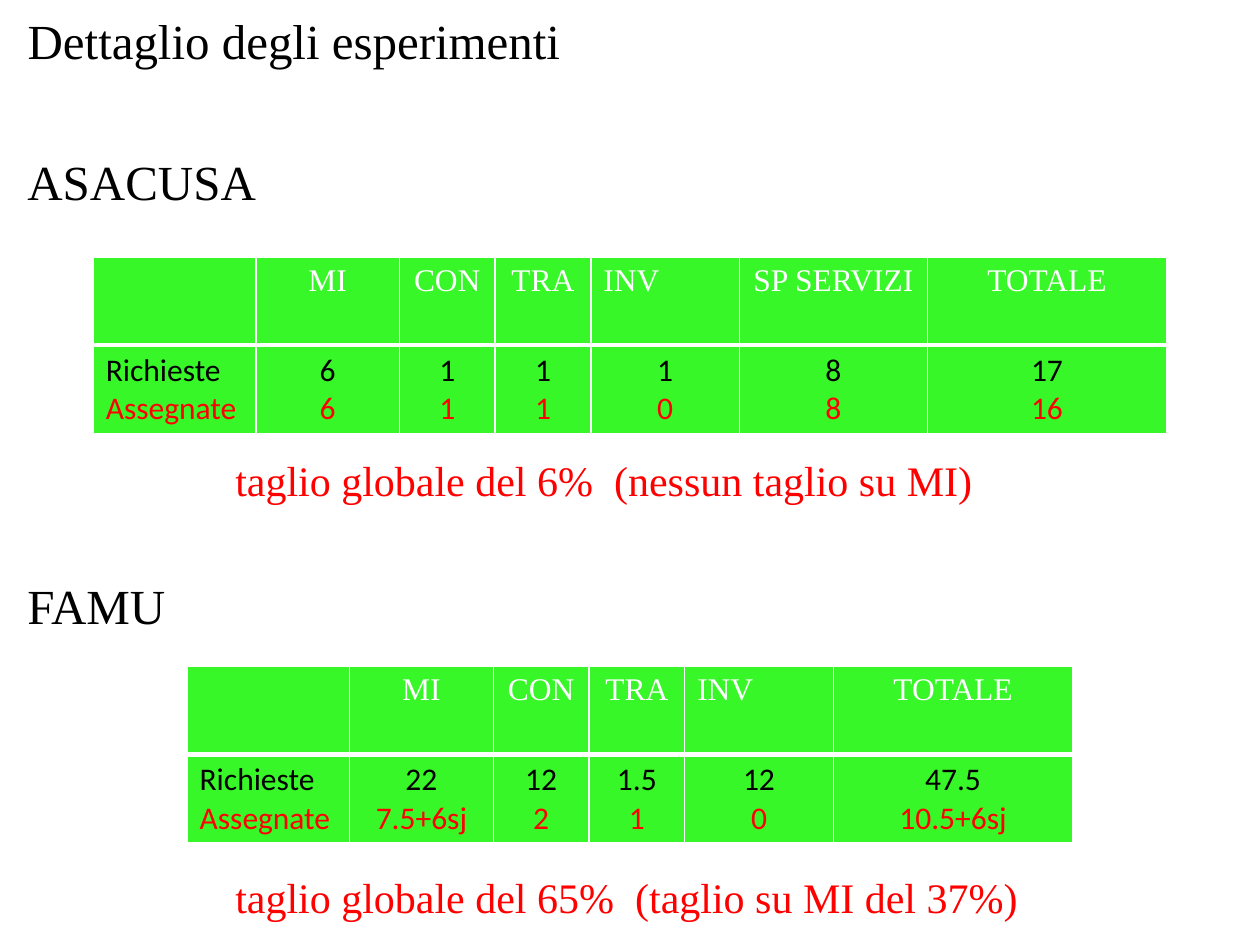
import dataclasses
import typing

import pptx
import pptx.dml.color
import pptx.enum.text
import pptx.oxml
import pptx.oxml.ns
import pptx.util

Pt = pptx.util.Pt
ALIGN = pptx.enum.text.PP_ALIGN

COLORS = {"white": "FFFFFF", "black": "000000", "red": "FF0000", "green": "38F729"}
COLUMN_WIDTHS = {"": 92.9, "MI": 82.1, "CON": 54.7, "TRA": 54.7,
                 "INV": 85, "SP SERVIZI": 107.3, "TOTALE": 136.8}
SLIDE_WIDTH, SLIDE_HEIGHT = 720, 540
ROW_HEIGHT = 50.3
SERIF, SANS = "Times New Roman", "Calibri"
BORDERS = {"L": 1, "R": 1, "T": 1, "B": 1}


@dataclasses.dataclass
class Label:
    text: str
    left: float
    top: float
    width: float
    height: float
    size: float = 28
    color: str = "black"


@dataclasses.dataclass
class BudgetTable:
    top: float
    columns: list[str]
    requested: list[str]
    assigned: list[str]


TITLE = Label("Dettaglio degli esperimenti", 8.6, 2.2, 329, 41)
LABELS = [
    Label("ASACUSA", 8.6, 82.8, 146.9, 41),
    Label("FAMU", 8.6, 325.4, 94.3, 41),
    Label("taglio globale del 6%  (nessun taglio su MI)", 127.4, 256.3, 439.2, 36, 24, "red"),
    Label("taglio globale del 65%  (taglio su MI del 37%)", 127.4, 494.6, 465.8, 36, 24, "red"),
]
TABLES = [
    BudgetTable(146.9, ["", "MI", "CON", "TRA", "INV", "SP SERVIZI", "TOTALE"],
                ["Richieste", "6", "1", "1", "1", "8", "17"],
                ["Assegnate", "6", "1", "1", "0", "8", "16"]),
    BudgetTable(380.9, ["", "MI", "CON", "TRA", "INV", "TOTALE"],
                ["Richieste", "22", "12", "1.5", "12", "47.5"],
                ["Assegnate", "7.5+6sj", "2", "1", "0", "10.5+6sj"]),
]


def apply_format(target: typing.Any, values: dict[str, typing.Any]) -> None:
    for name, value in values.items():
        setattr(target, name, value)


def fill_solid(target: typing.Any, color: str) -> None:
    target.fill.solid()
    target.fill.fore_color.rgb = pptx.dml.color.RGBColor.from_string(COLORS[color])


def write_paragraph(paragraph: typing.Any, text: str, font: str, size: float,
                    color: str, alignment: ALIGN) -> None:
    paragraph.alignment = alignment
    run = paragraph.add_run()
    run.text = text
    apply_format(run.font, {"name": font, "size": Pt(size), "bold": False})
    run.font.color.rgb = pptx.dml.color.RGBColor.from_string(COLORS[color])


def draw_label(shape: typing.Any, label: Label) -> None:
    apply_format(shape, {"left": Pt(label.left), "top": Pt(label.top),
                         "width": Pt(label.width), "height": Pt(label.height)})
    fill_solid(shape, "white")
    apply_format(shape.text_frame, {
        "word_wrap": False,
        "auto_size": pptx.enum.text.MSO_AUTO_SIZE.SHAPE_TO_FIT_TEXT,
        "vertical_anchor": pptx.enum.text.MSO_ANCHOR.TOP,
    })
    write_paragraph(shape.text_frame.paragraphs[0], label.text, SERIF,
                    label.size, label.color, ALIGN.LEFT)


def style_cell(cell: typing.Any, borders: dict[str, float]) -> None:
    properties = cell._tc.get_or_add_tcPr()
    for side, width in borders.items():
        properties.append(pptx.oxml.parse_xml(
            f'<a:ln{side} {pptx.oxml.ns.nsdecls("a")} w="{Pt(width)}"><a:solidFill>'
            f'<a:srgbClr val="{COLORS["white"]}"/></a:solidFill></a:ln{side}>'))
    fill_solid(cell, "green")


def draw_table(slide: typing.Any, budget: BudgetTable) -> None:
    widths = [COLUMN_WIDTHS[name] for name in budget.columns]
    total = sum(widths)
    table = slide.shapes.add_table(
        2, len(widths), Pt((SLIDE_WIDTH - total) / 2), Pt(budget.top),
        Pt(total), Pt(2 * ROW_HEIGHT)).table
    apply_format(table, {"horz_banding": False})
    for row in table.rows:
        row.height = Pt(ROW_HEIGHT)
    entries = zip(budget.columns, widths, budget.requested, budget.assigned)
    for index, (name, width, requested, assigned) in enumerate(entries):
        table.columns[index].width = Pt(width)
        header, body = table.cell(0, index), table.cell(1, index)
        style_cell(header, BORDERS | {"B": 3})
        style_cell(body, BORDERS | {"T": 3})
        if name:
            write_paragraph(header.text_frame.paragraphs[0], name, SERIF, 18, "white",
                            ALIGN.LEFT if name == "INV" else ALIGN.CENTER)
        alignment = ALIGN.CENTER if name else ALIGN.LEFT
        write_paragraph(body.text_frame.paragraphs[0], requested, SANS, 18, "black", alignment)
        write_paragraph(body.text_frame.add_paragraph(), assigned, SANS, 18, "red", alignment)


def main() -> None:
    presentation = pptx.Presentation()
    apply_format(presentation, {"slide_width": Pt(SLIDE_WIDTH),
                                "slide_height": Pt(SLIDE_HEIGHT)})
    slide = presentation.slides.add_slide(presentation.slide_layouts[5])
    draw_label(slide.shapes.title, TITLE)
    for label in LABELS:
        draw_label(slide.shapes.add_textbox(0, 0, 0, 0), label)
    for budget in TABLES:
        draw_table(slide, budget)
    presentation.save("out.pptx")


if __name__ == "__main__":
    main()
